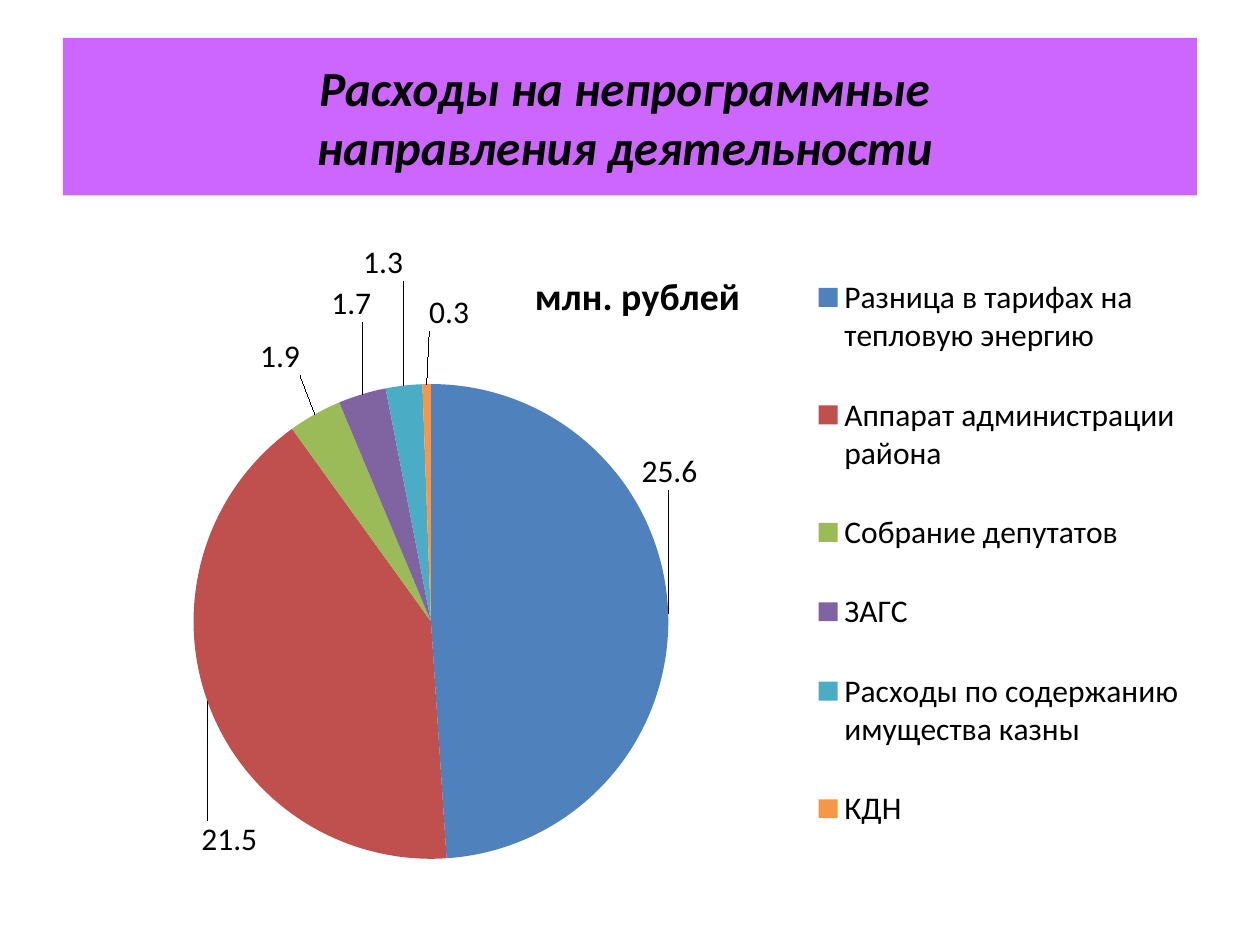
from lxml.etree import SubElement
from pptx import Presentation
from pptx.chart.data import CategoryChartData
from pptx.dml.color import RGBColor
from pptx.enum.chart import XL_CHART_TYPE as ChartType
from pptx.enum.chart import XL_LABEL_POSITION as LabelPosition
from pptx.enum.chart import XL_LEGEND_POSITION as LegendPosition
from pptx.enum.shapes import MSO_SHAPE as Preset
from pptx.enum.text import MSO_ANCHOR as Anchor
from pptx.enum.text import PP_ALIGN as Align
from pptx.oxml.ns import qn
from pptx.util import Inches, Pt

FONT = "Calibri"
UNIT = "млн. рублей"
EXPENSES = [
    ("Разница в тарифах на тепловую энергию", 25.6, (-0.03, -0.22)),
    ("Аппарат администрации района", 21.5, (0.05, 0.18)),
    ("Собрание депутатов", 1.9, (-0.01, -0.05)),
    ("ЗАГС", 1.7, (0.01, -0.1)),
    ("Расходы по содержанию имущества казны", 1.3, (0, -0.15)),
    ("КДН", 0.3, (0.02, -0.07)),
]


def rgb(value):
    """Turn a hex string into a colour."""
    return RGBColor.from_string(value)


def style_font(font, size, color="000000", bold=False, italic=False):
    """Set the typeface, size, colour and weight of a font."""
    font.name, font.size = FONT, Pt(size)
    font.bold, font.italic = bold, italic
    font.color.rgb = rgb(color)


def write(frame, text, align=Align.CENTER, **style):
    """Write one formatted paragraph into a text frame."""
    paragraph = frame.paragraphs[0]
    paragraph.text = text
    paragraph.alignment = align
    for run in paragraph.runs:
        style_font(run.font, **style)


def set_layout(parent, index, inner=False, **fractions):
    """Give a chart part a manual layout in fractions of the chart."""
    for previous in parent.findall(qn("c:layout")):
        parent.remove(previous)
    layout = SubElement(parent, qn("c:layout"))
    parent.insert(index, layout)
    manual = SubElement(layout, qn("c:manualLayout"))
    settings = {"layoutTarget": "inner"} if inner else {}
    if "mode" in fractions:
        mode = fractions.pop("mode")
        settings.update(xMode=mode, yMode=mode)
    settings.update(fractions)
    for tag, value in settings.items():
        SubElement(manual, qn(f"c:{tag}")).set("val", str(value))


def add_heading(slide, left, top, width, height):
    """Place the coloured heading band."""
    band = slide.shapes.add_shape(Preset.RECTANGLE, left, top, width, height)
    band.shadow.inherit = False
    band.fill.solid()
    band.fill.fore_color.rgb = rgb("CC66FF")
    band.line.fill.background()
    band.text_frame.word_wrap = True
    band.text_frame.vertical_anchor = Anchor.MIDDLE
    write(band.text_frame, "Расходы на непрограммные \vнаправления деятельности ",
          size=28, bold=True, italic=True)


def add_expense_pie(slide, left, top, width, height):
    """Place the pie of expenses with its labels, title and legend."""
    expenses = CategoryChartData()
    expenses.categories = [name for name, _, _ in EXPENSES]
    expenses.add_series(UNIT, [amount for _, amount, _ in EXPENSES])
    chart = slide.shapes.add_chart(
        ChartType.PIE, left, top, width, height, expenses).chart
    style_font(chart.font, 18)

    chart.has_title = True
    write(chart.chart_title.text_frame, UNIT, size=21.6, bold=True)
    chart.has_legend = True
    chart.legend.position = LegendPosition.RIGHT
    chart.legend.include_in_layout = False

    pie = chart.plots[0]
    pie.vary_by_categories = True
    series = pie.series[0]
    series.data_labels.show_value = True
    for index in range(len(EXPENSES)):
        series.points[index].data_label.position = LabelPosition.OUTSIDE_END

    root = chart.element if hasattr(chart, "element") else chart._chartSpace
    for label, (_, _, (dx, dy)) in zip(root.iter(qn("c:dLbl")), EXPENSES):
        set_layout(label, 1, x=dx, y=dy)
    area = root.find(f".//{qn('c:plotArea')}")
    set_layout(area, 0, inner=True, mode="edge", x=0.115, y=0.238, w=0.419, h=0.736)
    set_layout(root.find(f".//{qn('c:title')}"), 1, mode="edge", x=0.41, y=0.05)
    set_layout(root.find(f".//{qn('c:legend')}"), 1, mode="edge",
               x=0.66, y=0.01, w=0.33, h=0.98)


def main():
    """Build the slide and save it."""
    deck = Presentation()
    deck.slide_width, deck.slide_height = Inches(10), Inches(7.5)
    slide = deck.slides.add_slide(deck.slide_layouts[6])
    add_heading(slide, Inches(0.5), Inches(0.3), Inches(9), Inches(1.25))
    add_expense_pie(slide, Inches(0.5), Inches(1.83), Inches(9), Inches(5.12))
    deck.save("out.pptx")


if __name__ == "__main__":
    main()
